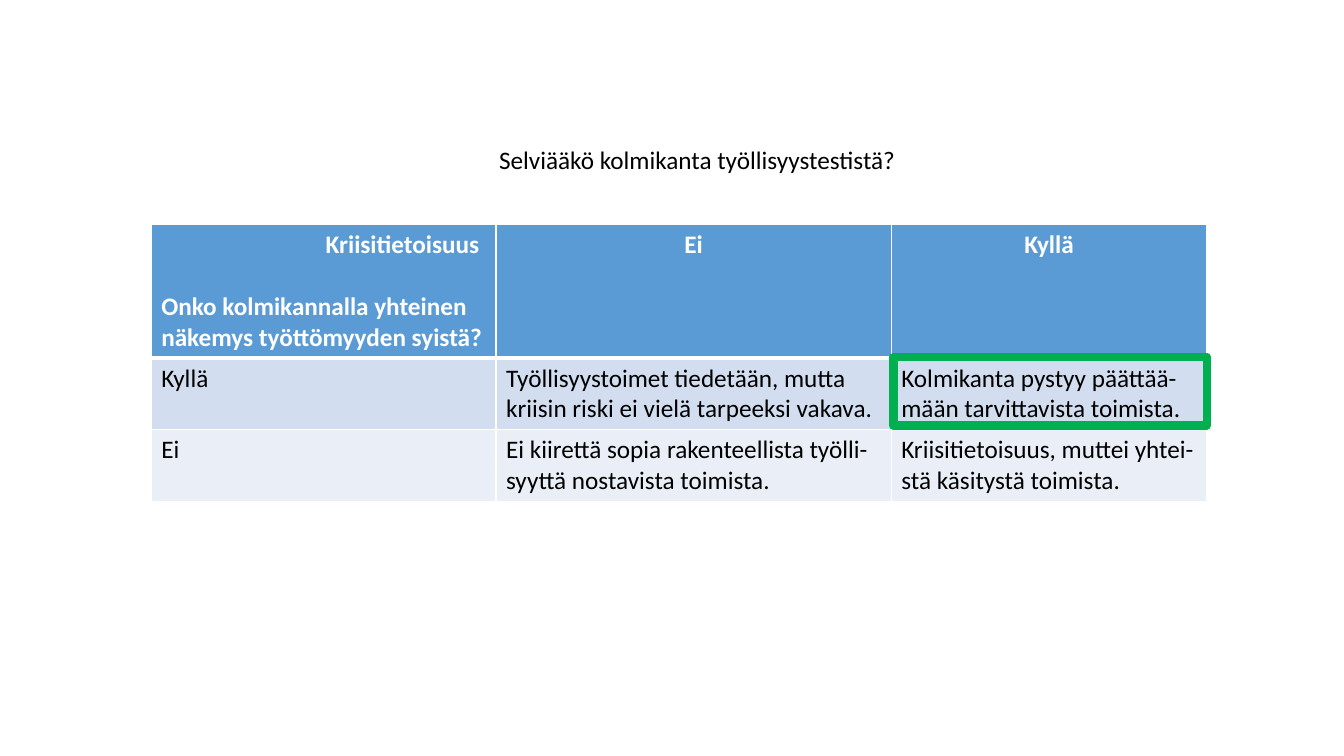
"""Build the slide that tests tripartite cooperation on employment."""
from dataclasses import dataclass

import pptx
import pptx.dml.color
import pptx.enum.shapes
import pptx.enum.text
import pptx.oxml
import pptx.oxml.ns
import pptx.util

Inches = pptx.util.Inches
Pt = pptx.util.Pt
RGBColor = pptx.dml.color.RGBColor
Align = pptx.enum.text.PP_ALIGN

WHITE = RGBColor(0xFF, 0xFF, 0xFF)
BLACK = RGBColor(0, 0, 0)
HEADER_BLUE = RGBColor(0x5B, 0x9B, 0xD5)
BAND_BLUE = RGBColor(0xD2, 0xDE, 0xEF)
PALE_BLUE = RGBColor(0xEA, 0xEF, 0xF7)
GREEN = RGBColor(0x00, 0xB0, 0x50)

COLUMN_WIDTHS = (3.42, 3.92, 3.13)
QUESTION = "Selviääkö kolmikanta työllisyystestistä?"


@dataclass(frozen=True)
class AnswerRow:
    texts: tuple[str, str, str]
    height: float
    fill: RGBColor
    color: RGBColor = BLACK
    bold: bool = False
    answer_align: Align = Align.LEFT
    top_border: int = 1
    bottom_border: int = 1


ANSWER_ROWS = (
    AnswerRow(
        ("Kriisitietoisuus\nOnko kolmikannalla yhteinen\nnäkemys työttömyyden syistä?", "Ei", "Kyllä"),
        1.32, HEADER_BLUE, WHITE, True, Align.CENTER, bottom_border=3,
    ),
    AnswerRow(
        ("Kyllä",
         "Työllisyystoimet tiedetään, mutta kriisin riski ei vielä tarpeeksi vakava.",
         "Kolmikanta pystyy päättää- mään tarvittavista toimista."),
        0.71, BAND_BLUE, top_border=3,
    ),
    AnswerRow(
        ("Ei",
         "Ei kiirettä sopia rakenteellista työlli-syyttä nostavista toimista.",
         "Kriisitietoisuus, muttei yhtei-stä käsitystä toimista."),
        0.71, PALE_BLUE,
    ),
)


def format_text(frame, color: RGBColor, bold: bool, align: Align) -> None:
    for paragraph in frame.paragraphs:
        paragraph.alignment = align
        paragraph.font.color.rgb = color
        for run in paragraph.runs:
            run.font.color.rgb = color
            for name, value in {"name": "Calibri", "size": Pt(18), "bold": bold}.items():
                setattr(run.font, name, value)


def add_borders(cell, row: AnswerRow) -> None:
    properties = cell._tc.get_or_add_tcPr()
    widths = {"lnL": 1, "lnR": 1, "lnT": row.top_border, "lnB": row.bottom_border}
    for side, width in widths.items():
        properties.append(pptx.oxml.parse_xml(
            f'<a:{side} {pptx.oxml.ns.nsdecls("a")} w="{Pt(width)}">'
            f'<a:solidFill><a:srgbClr val="{WHITE}"/></a:solidFill></a:{side}>'
        ))


def add_question(slide) -> None:
    question = slide.shapes.title
    place = {"left": 4.85, "top": 1.38, "width": 4.43, "height": 0.4}
    for name, value in place.items():
        setattr(question, name, Inches(value))
    frame = question.text_frame
    frame.text = QUESTION
    settings = {
        "word_wrap": True,
        "auto_size": pptx.enum.text.MSO_AUTO_SIZE.NONE,
        "vertical_anchor": pptx.enum.text.MSO_ANCHOR.TOP,
    }
    for name, value in settings.items():
        setattr(frame, name, value)
    frame.paragraphs[0].line_spacing = 1.0
    format_text(frame, BLACK, False, Align.LEFT)


def add_answers(slide) -> None:
    answers = slide.shapes.add_table(
        len(ANSWER_ROWS), len(COLUMN_WIDTHS), Inches(1.5), Inches(2.23),
        Inches(sum(COLUMN_WIDTHS)), Inches(sum(row.height for row in ANSWER_ROWS)),
    ).table
    answers.horz_banding = False
    for column, width in zip(answers.columns, COLUMN_WIDTHS):
        column.width = Inches(width)
    for row_index, row in enumerate(ANSWER_ROWS):
        answers.rows[row_index].height = Inches(row.height)
        for column_index, text in enumerate(row.texts):
            cell = answers.cell(row_index, column_index)
            cell.text_frame.text = text
            align = row.answer_align if column_index else Align.LEFT
            format_text(cell.text_frame, row.color, row.bold, align)
            add_borders(cell, row)
            cell.fill.solid()
            cell.fill.fore_color.rgb = row.fill
    awareness, view = answers.cell(0, 0).text_frame.paragraphs[:2]
    awareness._p.get_or_add_pPr().set("marL", str(Inches(1.63)))
    view.space_before = Pt(22)


def add_highlight(slide) -> None:
    highlight = slide.shapes.add_shape(
        pptx.enum.shapes.MSO_SHAPE.RECTANGLE,
        Inches(8.86), Inches(3.54), Inches(3.11), Inches(0.68),
    )
    highlight.shadow.inherit = False
    highlight.fill.background()
    highlight.line.color.rgb = GREEN
    highlight.line.width = Pt(6)


def main() -> None:
    presentation = pptx.Presentation()
    presentation.slide_width = Inches(13.33)
    presentation.slide_height = Inches(7.5)
    slide = presentation.slides.add_slide(presentation.slide_layouts[5])
    add_question(slide)
    add_answers(slide)
    add_highlight(slide)
    presentation.save("out.pptx")


if __name__ == "__main__":
    main()
